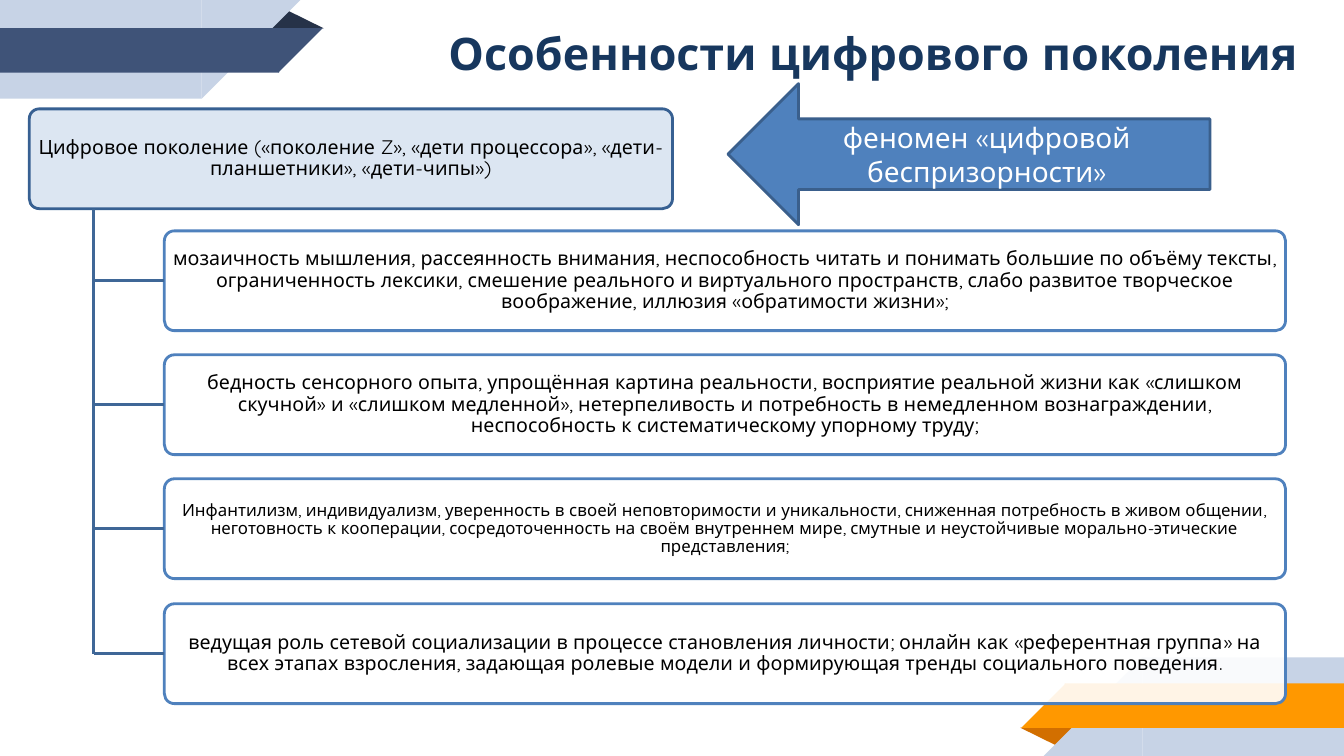
from lxml import etree
from pptx import Presentation
from pptx import util as u
from pptx.dml.color import RGBColor
from pptx.enum import shapes, text
from pptx.oxml.ns import qn

SCALE = 9144
FONT = "Quicksand"
WHITE = RGBColor(0xFF, 0xFF, 0xFF)
BLACK = RGBColor(0, 0, 0)
PALE = RGBColor(0xC7, 0xD3, 0xE6)
NAVY = RGBColor(0x3F, 0x53, 0x78)
DARK_NAVY = RGBColor(0x26, 0x32, 0x48)
ORANGE = RGBColor(0xFF, 0x98, 0x00)
DARK_ORANGE = RGBColor(0xD2, 0x6F, 0x00)
TITLE = RGBColor(0x17, 0x37, 0x5E)
ROOT_FILL = RGBColor(0xDC, 0xE6, 0xF2)
ROOT_LINE = RGBColor(0x37, 0x60, 0x92)
BLUE = RGBColor(0x4F, 0x81, 0xBD)
ARROW_LINE = RGBColor(0x3A, 0x5F, 0x8C)
BRANCH = RGBColor(0x3F, 0x67, 0x97)

ROOT_TEXT = "Цифровое поколение («поколение Z», «дети процессора», «дети-планшетники», «дети-чипы»)"
FEATURES = [
    ("мозаичность мышления, рассеянность внимания, неспособность читать и понимать "
     "большие по объёму тексты, ограниченность лексики, смешение реального и виртуального "
     "пространств, слабо развитое творческое воображение, иллюзия «обратимости жизни»;", 14),
    ("бедность сенсорного опыта, упрощённая картина реальности, восприятие реальной жизни "
     "как «слишком скучной» и «слишком медленной», нетерпеливость и потребность в немедленном "
     "вознаграждении, неспособность к систематическому упорному труду;", 14),
    ("Инфантилизм, индивидуализм, уверенность в своей неповторимости и уникальности, "
     "сниженная потребность в живом общении, неготовность к кооперации, сосредоточенность "
     "на своём внутреннем мире, смутные и неустойчивые морально-этические представления;", 12),
    ("ведущая роль сетевой социализации в процессе становления личности; онлайн как "
     "«референтная группа» на всех этапах взросления, задающая ролевые модели и формирующая "
     "тренды социального поведения.", 14),
]


def px(*lengths):
    """Turn px lengths into a list of EMU."""
    return [u.Emu(n * SCALE) for n in lengths]


def add_shape(s, kind, box, fill, line=None):
    """Add a flat preset shape with an optional 2 pt outline."""
    sp = s.shapes.add_shape(kind, *px(*box))
    sp.shadow.inherit = False
    sp.fill.solid()
    sp.fill.fore_color.rgb = fill
    if line is None:
        sp.line.fill.background()
    else:
        sp.line.color.rgb = line
        sp.line.width = u.Pt(2)
    return sp


def write(p, words, size, color, bold=False):
    """Add one formatted run to a paragraph."""
    r = p.add_run()
    r.text = words
    r.font.name = FONT
    r.font.size = u.Pt(size)
    r.font.bold = bold
    r.font.color.rgb = color


def write_centred(sp, words, size, color):
    """Write wrapped text in the middle of a shape."""
    tf = sp.text_frame
    tf.word_wrap = True
    tf.vertical_anchor = text.MSO_ANCHOR.MIDDLE
    p = tf.paragraphs[0]
    p.alignment = text.PP_ALIGN.CENTER
    write(p, words, size, color)
    return tf


def add_ribbon(s, box, band, fold, turned=False):
    """Draw a corner ribbon, turned half a circle if asked."""
    left, top, width, height = box
    rect, corner = shapes.MSO_SHAPE.RECTANGLE, shapes.MSO_SHAPE.RIGHT_TRIANGLE
    parts = [
        (shapes.MSO_SHAPE.ISOSCELES_TRIANGLE, 264, 9, 57, 19, 0, fold),
        (rect, 0, 0, 200, height, 0, PALE),
        (corner, 200, 0, height, height, 90, PALE),
        (rect, 0, 28, 277, 44, 0, band),
        (corner, 276, 28, 44, 44, 90, band),
    ]
    for kind, x, y, w, h, angle, color in parts:
        if turned:
            x, y, angle = width - x - w, height - y - h, angle + 180
        sp = add_shape(s, kind, (left + x, top + y, w, h), color)
        sp.rotation = angle
        if color == fold:
            sp.adjustments[0] = 0.324


def add_title(s, box):
    """Write the slide title."""
    tf = s.shapes.add_textbox(*px(*box)).text_frame
    tf.word_wrap = False
    tf.auto_size = text.MSO_AUTO_SIZE.SHAPE_TO_FIT_TEXT
    write(tf.paragraphs[0], "Особенности цифрового поколения", 32, TITLE, True)


def add_card(s, box, words, size, fill, line):
    """Draw a rounded card with tight centred text."""
    sp = add_shape(s, shapes.MSO_SHAPE.ROUNDED_RECTANGLE, box, fill, line)
    sp.adjustments[0] = 0.1
    tf = write_centred(sp, words, size, BLACK)
    tf.margin_left, tf.margin_right, tf.margin_top, tf.margin_bottom = px(3, 3, 2, 2)
    tf.paragraphs[0].line_spacing = 0.9
    return sp


def add_line(s, x1, y1, x2, y2):
    """Draw a straight tree line between two EMU points."""
    line = s.shapes.add_connector(shapes.MSO_CONNECTOR.STRAIGHT, x1, y1, x2, y2)
    line.line.color.rgb = BRANCH
    line.line.width = u.Pt(2)
    etree.SubElement(line._element.spPr, qn("a:effectLst"))
    return line


def add_tree(s, box):
    """Draw the root card and the features that branch from it."""
    left, top, width, height = box
    card_h, indent, trunk = 99, 134, 64
    root = add_card(s, (left, top, 638, card_h), ROOT_TEXT, 14, ROOT_FILL, ROOT_LINE)
    trunk_x = root.left + px(trunk)[0]
    for i, (words, size) in enumerate(FEATURES):
        y = top + 121 + (height - 121 - card_h) * i // (len(FEATURES) - 1)
        card = add_card(s, (left + indent, y, width - indent, card_h), words, size, WHITE, BLUE)
        color = card.fill._xPr.find(qn("a:solidFill"))[0]
        etree.SubElement(color, qn("a:alpha"), val="90000")
        middle = card.top + card.height // 2
        add_line(s, trunk_x, middle, card.left, middle).end_connect(card, 1)
    add_line(s, trunk_x, root.top + root.height, trunk_x, middle)


def add_arrow(s, box):
    """Draw the arrow that names the phenomenon."""
    sp = add_shape(s, shapes.MSO_SHAPE.LEFT_ARROW, box, BLUE, ARROW_LINE)
    write_centred(sp, "феномен «цифровой беспризорности»", 20, WHITE)


def main():
    """Build and save the slide."""
    prs = Presentation()
    prs.slide_width, prs.slide_height = px(1333, 750)
    s = prs.slides.add_slide(prs.slide_layouts[6])
    add_ribbon(s, (1013, 652, 320, 98), ORANGE, DARK_ORANGE, turned=True)
    add_ribbon(s, (0, 0, 320, 98), NAVY, DARK_NAVY)
    add_title(s, (435, 21, 873, 64))
    add_tree(s, (29, 108, 1246, 590))
    add_arrow(s, (722, 83, 478, 140))
    prs.save("out.pptx")


if __name__ == "__main__":
    main()
